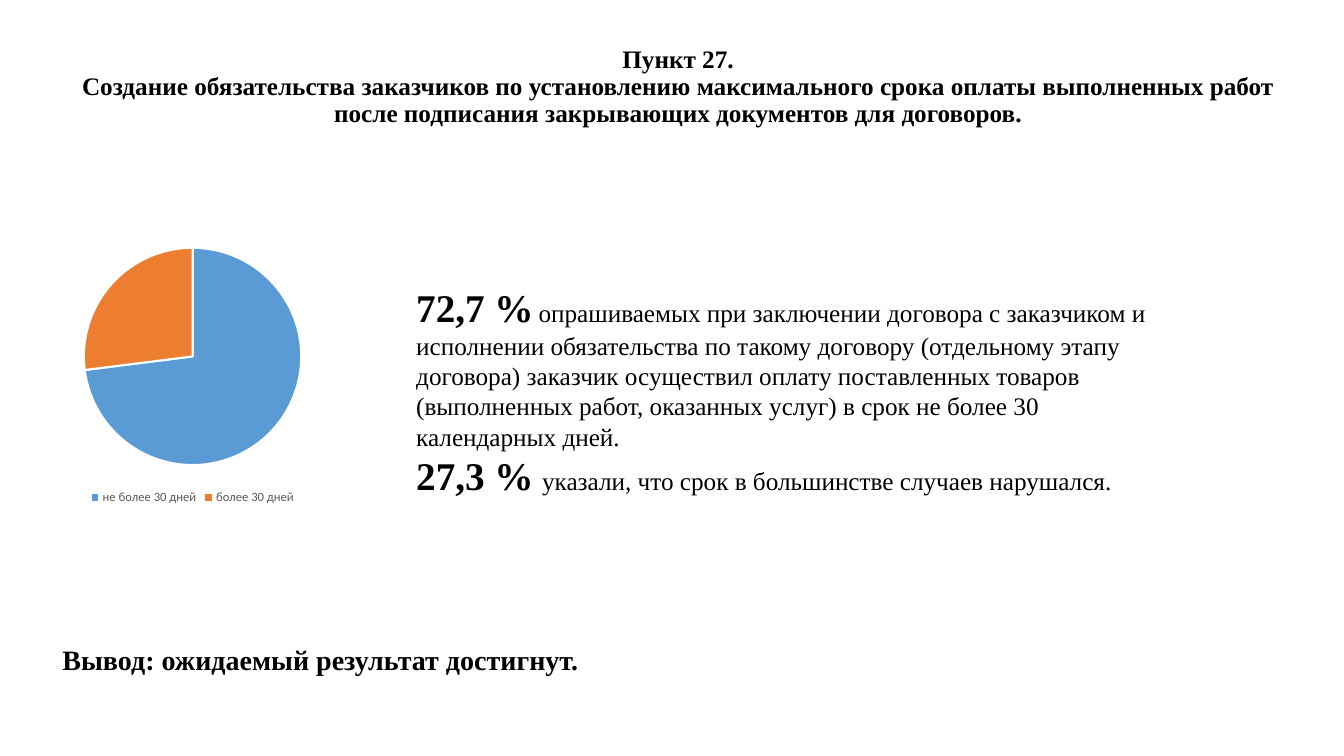
"""Build a slide on payment terms with a pie chart and a conclusion."""
from pptx import Presentation
from pptx.chart.data import CategoryChartData as ChartData
from pptx.dml.color import RGBColor
from pptx.enum.chart import XL_CHART_TYPE as Kind, XL_LEGEND_POSITION as Place
from pptx.enum.text import MSO_ANCHOR as Anchor, PP_ALIGN as Align
from pptx.util import Inches, Pt


def style(font, size, color="000000", name="Times New Roman", bold=None):
    font.size, font.name, font.bold = Pt(size), name, bold
    font.color.rgb = RGBColor.from_string(color)


def add_box(left, top, width, height):
    box = slide.shapes.add_textbox(*map(Inches, (left, top, width, height)))
    box.text_frame.word_wrap = True
    return box.text_frame


deck = Presentation()
deck.slide_width, deck.slide_height = Inches(13.33), Inches(7.5)
slide = deck.slides.add_slide(deck.slide_layouts[6])

title = add_box(0.38, 0.4, 12.69, 0.93)
title.vertical_anchor = Anchor.MIDDLE
head = title.paragraphs[0]
head.text = (
    "Пункт 27.\nСоздание обязательства заказчиков по установлению максимального "
    "срока оплаты выполненных работ после подписания закрывающих документов для договоров."
)
head.alignment, head.line_spacing = Align.CENTER, 0.9
style(head.font, 18, bold=True)

data = ChartData()
data.categories = ["не более 30 дней", "более 30 дней"]
data.add_series("Срок оплаты", (73, 27))
frame = slide.shapes.add_chart(
    Kind.PIE, Inches(0.4), Inches(2.32), Inches(3.02), Inches(2.73), data
)
chart = frame.chart
chart.has_title = False
style(chart.font, 10, name="Calibri")
chart.has_legend = True
chart.legend.position = Place.BOTTOM
chart.legend.include_in_layout = False
style(chart.legend.font, 9, "595959", "Calibri")
pie = chart.plots[0]
pie.vary_by_categories = True
for spot, color in enumerate(("5B9BD5", "ED7D31")):
    part = pie.series[0].points[spot].format
    part.fill.solid()
    part.fill.fore_color.rgb = RGBColor.from_string(color)
    part.line.color.rgb = RGBColor.from_string("FFFFFF")
    part.line.width = Pt(1.5)

facts = [
    ("72,7 %", 14,
     "опрашиваемых при заключении договора с заказчиком и исполнении обязательства "
     "по такому договору (отдельному этапу договора) заказчик осуществил оплату "
     "поставленных товаров (выполненных работ, оказанных услуг) в срок не более 30 "
     "календарных дней."),
    ("27,3 %", 24, "указали, что срок в большинстве случаев нарушался."),
]
body = add_box(4.03, 2.76, 7.44, 2.49)
for row, (share, gap, words) in enumerate(facts):
    para = body.add_paragraph() if row else body.paragraphs[0]
    for text, size, bold in ((share, 28, True), (" ", gap, True), (words, 18, False)):
        run = para.add_run()
        run.text = text
        style(run.font, size, bold=bold)

end = add_box(0.52, 6.33, 12.56, 0.74).paragraphs[0]
end.text = "Вывод: ожидаемый результат достигнут."
style(end.font, 20, bold=True)

deck.save("out.pptx")
